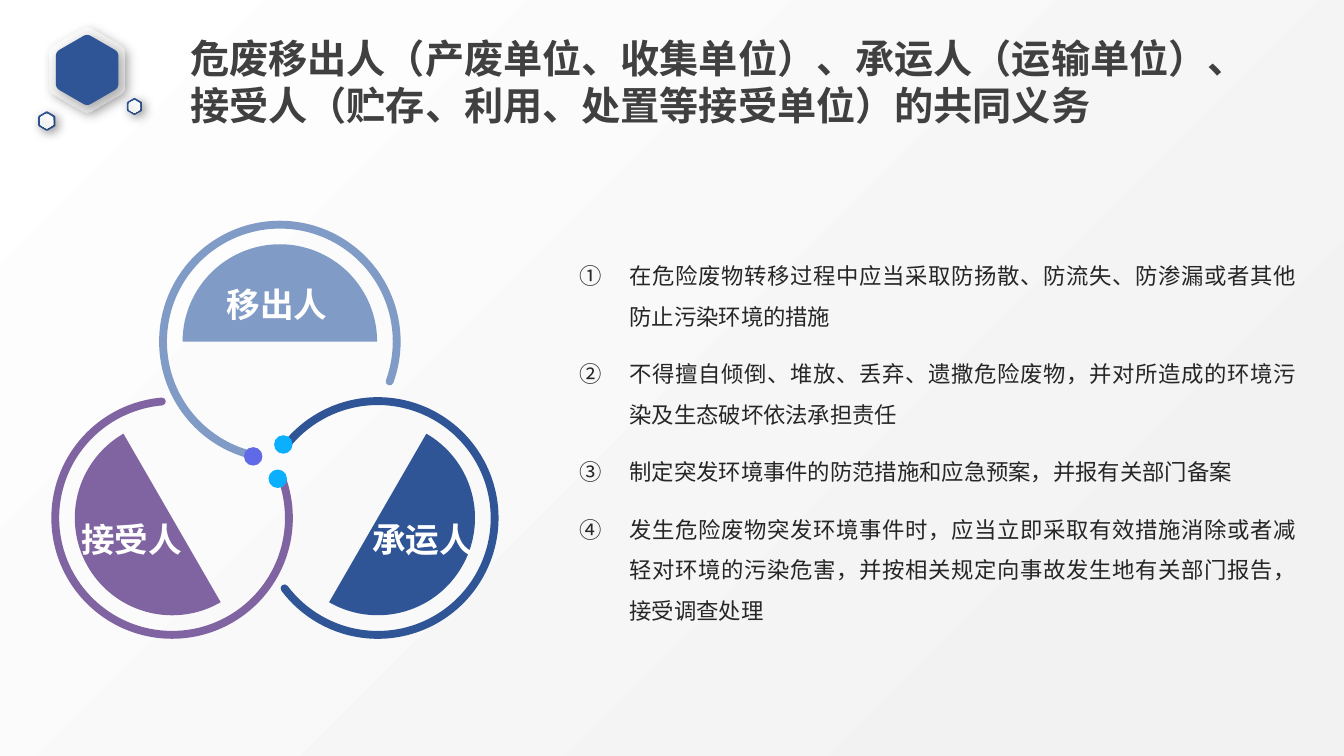
import math

from lxml import etree
from pptx import Presentation
from pptx.dml.color import RGBColor
from pptx.enum import shapes, text
from pptx.oxml.ns import qn
from pptx.util import Pt

FONT = "Noto Sans CJK SC"
COLORS = {
    "white": "FFFFFF", "pale": "F2F2F2", "silver": "E2E2E2", "black": "000000",
    "title": "404040", "body": "262626", "navy": "2F5596", "steel": "809BC6",
    "purple": "8064A2", "indigo": "6069E6", "cyan": "0AAFFE",
}
TITLE = "危废移出人（产废单位、收集单位）、承运人（运输单位）、接受人（贮存、利用、处置等接受单位）的共同义务"
DUTIES = [
    "在危险废物转移过程中应当采取防扬散、防流失、防渗漏或者其他防止污染环境的措施",
    "不得擅自倾倒、堆放、丢弃、遗撒危险废物，并对所造成的环境污染及生态破坏依法承担责任",
    "制定突发环境事件的防范措施和应急预案，并报有关部门备案",
    "发生危险废物突发环境事件时，应当立即采取有效措施消除或者减轻对环境的污染危害，"
    "并按相关规定向事故发生地有关部门报告，接受调查处理",
]
# name, colour, centre, ring angles, half-disc start angle, label offset, dot colour, dot centre
PARTIES = [
    ("移出人", "steel", (149, 99), (102, 20), 180, (-45, -45), "indigo", (130, 181)),
    ("承运人", "navy", (219, 225), (218, 143), 300, (-11, -3), "cyan", (151.5, 172.5)),
    ("接受人", "purple", (72, 225), (339, 265), 60, (-72, -3), "cyan", (147.5, 197)),
]


def rgb(name):
    return RGBColor.from_string(COLORS[name])


def fill_gradient(fill, start, end, angle, end_position=1.0):
    fill.gradient()
    fill.gradient_angle = angle
    first, last = fill.gradient_stops
    first.color.rgb, last.color.rgb = rgb(start), rgb(end)
    first.position, last.position = 0, end_position


def add_disc(s, kind, center, radius, color=None, angles=None):
    """Round preset shape about a centre; angles run clockwise in degrees."""
    x, y = center
    sp = s.shapes.add_shape(kind, Pt(x - radius), Pt(y - radius), Pt(2 * radius), Pt(2 * radius))
    sp.shadow.inherit = False
    sp.line.fill.background()
    if color:
        sp.fill.solid()
        sp.fill.fore_color.rgb = rgb(color)
    else:
        sp.fill.background()
    for i, angle in enumerate(angles or ()):
        sp.adjustments[i] = angle * 0.6
    return sp


def add_text(s, box, paragraphs, size, color, spacing, bold=False):
    tf = s.shapes.add_textbox(*map(Pt, box)).text_frame
    tf.word_wrap = True
    for i, words in enumerate(paragraphs):
        p = tf.paragraphs[0] if i == 0 else tf.add_paragraph()
        p.text = words
        p.line_spacing = Pt(spacing)
        p.font.size, p.font.bold, p.font.name = Pt(size), bold, FONT
        p.font.color.rgb = rgb(color)
        etree.SubElement(p._p.pPr.find(qn("a:defRPr")), qn("a:ea"), typeface=FONT)
    return tf


def add_hexagon(s, center, radius):
    """Upright hexagon with softened corners and a drop shadow."""
    corners = [(center[0] + radius * math.sin(math.radians(60 * i)),
                center[1] - radius * math.cos(math.radians(60 * i))) for i in range(6)]
    points = []
    for i, (x, y) in enumerate(corners):
        (ax, ay), (bx, by) = corners[i - 1], corners[(i + 1) % 6]
        for t in (0, 0.25, 0.5, 0.75, 1):
            before, after = 0.12 * (1 - t) ** 2, 0.12 * t ** 2
            points.append((Pt(x + before * (ax - x) + after * (bx - x)),
                           Pt(y + before * (ay - y) + after * (by - y))))
    builder = s.shapes.build_freeform(*points[0])
    builder.add_line_segments(points[1:], close=True)
    sp = builder.convert_to_shape()
    sp.line.fill.background()
    sp.shadow.inherit = False
    effects = sp._element.spPr.find(qn("a:effectLst"))
    shadow = etree.SubElement(effects, qn("a:outerShdw"), blurRad=str(Pt(8)),
                              dist=str(Pt(3)), dir="2700000", algn="tl", rotWithShape="0")
    tint = etree.SubElement(shadow, qn("a:srgbClr"), val=COLORS["black"])
    etree.SubElement(tint, qn("a:alpha"), val="28000")
    return sp


def add_emblem(s, left, top):
    for x, y, outer, inner in ((35.3, 30, 31.2, 25.8), (6.5, 66.5, 7.1, 5.4), (69.1, 56.1, 6.2, 4.6)):
        center = left + x, top + y
        frame, core = add_hexagon(s, center, outer), add_hexagon(s, center, inner)
        solid, shaded = (core, frame) if outer > 10 else (frame, core)
        solid.fill.solid()
        solid.fill.fore_color.rgb = rgb("navy")
        if shaded is frame:
            fill_gradient(shaded.fill, "white", "silver", 315)
        else:
            fill_gradient(shaded.fill, "white", "pale", 220, 0.77)


def add_header(s, left, top):
    add_emblem(s, left, top)
    add_text(s, (left + 101.9, top + 0.9, 779, 75), [TITLE], 28, "title", 33.6, bold=True)


def add_parties(s, left, top):
    """Three open rings, each with an end dot and a labelled half disc."""
    for name, color, (x, y), ring, half, (dx, dy), dot_color, (dot_x, dot_y) in PARTIES:
        center = left + x, top + y
        arc = add_disc(s, shapes.MSO_SHAPE.ARC, center, 83.5, angles=ring)
        arc.line.color.rgb = rgb(color)
        arc.line.width = Pt(5.6)
        arc.line._get_or_add_ln().set("cap", "rnd")
        add_disc(s, shapes.MSO_SHAPE.OVAL, (left + dot_x, top + dot_y), 6.6, dot_color)
        add_disc(s, shapes.MSO_SHAPE.CHORD, center, 69.5, color, (half, (half + 180) % 360))
        add_text(s, (center[0] + dx, center[1] + dy, 118, 36), [name], 24, "white", 28.8, bold=True)


def add_duties(s, left, top, width, height):
    tf = add_text(s, (left, top, width, height), DUTIES, 16, "body", 29)
    for p in tf.paragraphs:
        p.alignment = text.PP_ALIGN.JUSTIFY
        p.space_before = Pt(12)
        pPr = p._p.pPr
        pPr.set("marL", str(Pt(36)))
        pPr.set("indent", str(-Pt(36)))
        number = etree.Element(qn("a:buAutoNum"), type="circleNumDbPlain")
        pPr.find(qn("a:defRPr")).addprevious(number)


def main():
    prs = Presentation()
    prs.slide_width, prs.slide_height = Pt(960.5), Pt(540)
    s = prs.slides.add_slide(prs.slide_layouts[6])
    fill_gradient(s.background.fill, "white", "pale", 315, 0.88)
    add_header(s, 27, 20)
    add_parties(s, 51, 145)
    add_duties(s, 406.8, 174.2, 527, 295)
    prs.save("out.pptx")


if __name__ == "__main__":
    main()
